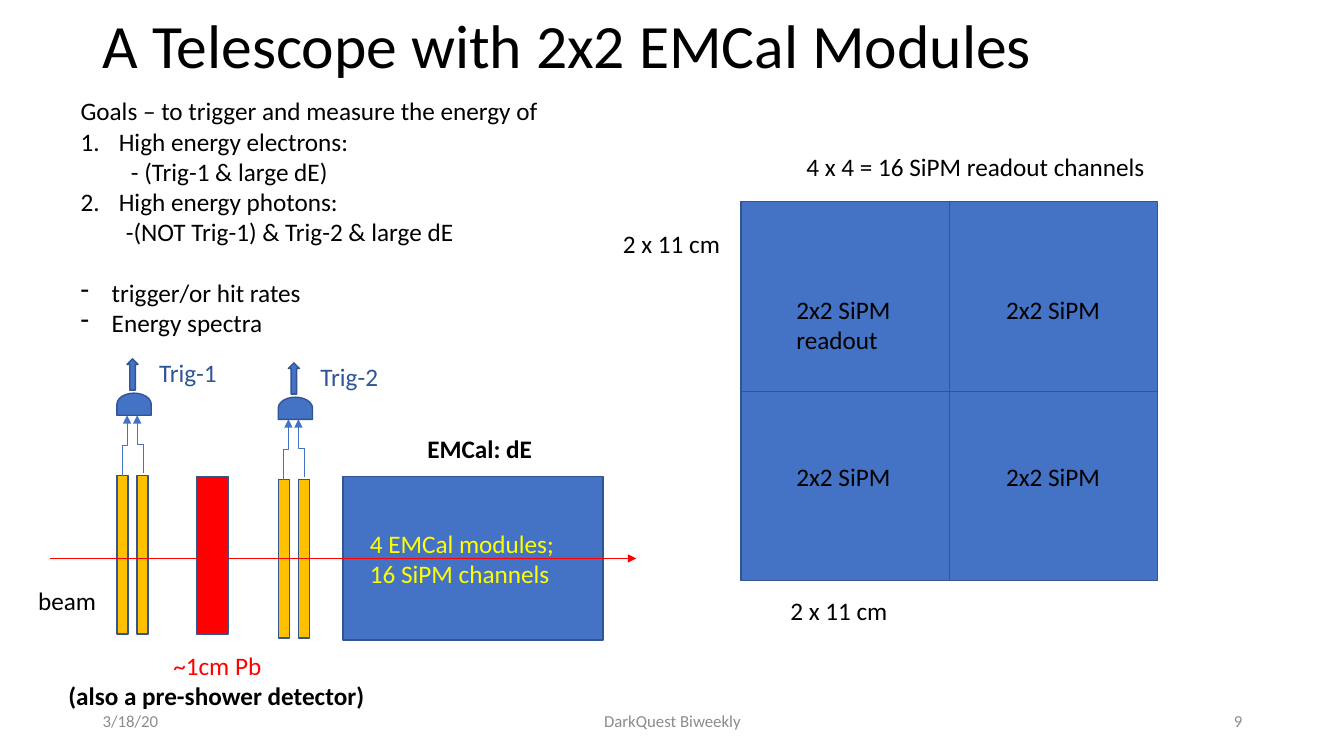
from pptx import Presentation
from pptx.util import Inches, Pt
from pptx.dml.color import RGBColor
from pptx.enum.shapes import MSO_SHAPE, MSO_CONNECTOR
from pptx.enum.text import PP_ALIGN, MSO_ANCHOR
from pptx.oxml.ns import qn
from lxml.etree import SubElement

THEME = {
    "font": "Calibri", "title": 44, "body": 18, "foot": 12, "thin": 0.5, "edge": 1,
    "black": "000000", "grey": "8C8C8C", "blue": "4472C4", "dark": "325491",
    "navy": "2F5597", "gold": "FFC000", "red": "FF0000", "yellow": "FFFF00",
}

TITLE = "A Telescope with 2x2 EMCal Modules"
FOOTER = [
    ("3/18/20", 0.92, 3, PP_ALIGN.LEFT),
    ("DarkQuest Biweekly", 4.42, 4.5, PP_ALIGN.CENTER),
    ("9", 9.42, 3, PP_ALIGN.RIGHT),
]
GOALS = [
    ("Goals – to trigger and measure the energy of", {}),
    ("High energy electrons:", {"left": 0.38, "hang": 0.38, "mark": "1"}),
    ("- (Trig-1 & large dE)", {"left": 0.5, "level": 1}),
    ("High energy photons:", {"left": 0.38, "hang": 0.38, "mark": "1"}),
    ("-(NOT Trig-1) & Trig-2 & large dE", {"left": 0.45, "level": 1}),
    ("trigger/or hit rates", {"left": 0.31, "hang": 0.31, "mark": "-", "gap": 21.6}),
    ("Energy spectra", {"left": 0.31, "hang": 0.31, "mark": "-"}),
]
LABELS = [
    (["2 x 11 cm"], 7.74, 5.86, 1.18, "black", False),
    (["2 x 11 cm"], 6.08, 2.22, 1.18, "black", False),
    (["4 x 4 = 16 SiPM readout channels"], 7.9, 1.45, 3.6, "black", False),
    (["beam"], 0.28, 5.76, 0.78, "black", False),
    (["~1cm Pb"], 1.62, 6.4, 1.09, "red", False),
    (["EMCal: dE"], 4.14, 4.25, 1.25, "black", True),
    (["(also a pre-shower detector)"], 0.58, 6.7, 3.16, "black", True),
]
FACE = (7.35, 2, 4.13, 3.76)
CELLS = [[["2x2 SiPM", "readout"], ["2x2 SiPM"]], [["2x2 SiPM"], ["2x2 SiPM"]]]
CALO = ["4 EMCal modules;", "16 SiPM channels"]
TRIGS = [("Trig-1", 1.16, 4.72), ("Trig-2", 2.76, 4.76)]

deck = Presentation()
deck.slide_width, deck.slide_height = Inches(13.33), Inches(7.5)
slide = deck.slides.add_slide(deck.slide_layouts[6])
shapes = slide.shapes


def tint(name):
    return RGBColor.from_string(THEME[name])


def style(para, text, color="black", size="body", bold=False):
    run = para.add_run()
    run.text = text
    font = run.font
    font.name, font.size, font.bold = THEME["font"], Pt(THEME[size]), bold
    font.color.rgb = tint(color)


def indent(para, left=0, hang=0, mark=None, level=0, gap=0):
    para.level = level
    para.space_before = Pt(gap)
    props = para._p.get_or_add_pPr()
    props.set("marL", str(Inches(left)))
    props.set("indent", str(-Inches(hang)))
    if mark == "1":
        SubElement(props, qn("a:buAutoNum"), type="arabicPeriod")
    elif mark:
        SubElement(props, qn("a:buChar"), char=mark)
    else:
        SubElement(props, qn("a:buNone"))


def write(frame, lines, color="black", size="body", bold=False):
    for i, (text, opts) in enumerate(lines):
        para = frame.paragraphs[0] if i == 0 else frame.add_paragraph()
        indent(para, **opts)
        style(para, text, color, size, bold)


def label(lines, x, y, w, h=0.4, wrap=False, **look):
    frame = shapes.add_textbox(*map(Inches, (x, y, w, h))).text_frame
    frame.word_wrap = wrap
    write(frame, lines, **look)
    return frame


def plain(lines):
    return [(text, {}) for text in lines]


def block(x, y, w, h, fill, kind=MSO_SHAPE.RECTANGLE, turn=0):
    shape = shapes.add_shape(kind, *map(Inches, (x, y, w, h)))
    shape.shadow.inherit = False
    shape.rotation = turn
    shape.fill.solid()
    shape.fill.fore_color.rgb = tint(fill)
    shape.line.color.rgb = tint("dark")
    shape.line.width = Pt(THEME["edge"])
    return shape


def wire(x1, y1, x2, y2, color, head=False, kind=MSO_CONNECTOR.STRAIGHT):
    line = shapes.add_connector(kind, *map(Inches, (x1, y1, x2, y2)))
    line.line.color.rgb = tint(color)
    line.line.width = Pt(THEME["thin"])
    if head:
        SubElement(line.line._get_or_add_ln(), qn("a:tailEnd"), type="triangle")
    SubElement(line._element.spPr, qn("a:effectLst"))
    return line


def riser(x1, y1, x2, y2):
    mx, my = (x1 + x2) / 2, (y1 + y2) / 2
    side = 1 if x1 > x2 else -1
    run, rise = side * (y1 - y2) / 2, abs(x1 - x2) / 2
    line = wire(mx - run, my + rise, mx + run, my - rise, "blue", True, MSO_CONNECTOR.ELBOW)
    line._element.spPr.find(qn("a:xfrm")).set("rot", str((180 + 90 * side) * 60000))


def trigger(name, x, y):
    for dx in (0, 0.2):
        block(x + dx, y, 0.11, 1.57, "gold")
    riser(x + 0.05, y, x + 0.1, y - 0.6)
    riser(x + 0.26, y - 0.03, x + 0.2, y - 0.6)
    block(x + 0.06, y - 0.88, 0.22, 0.34, "blue", MSO_SHAPE.FLOWCHART_DELAY, 270)
    block(x, y - 1.06, 0.31, 0.11, "blue", MSO_SHAPE.RIGHT_ARROW, 270)
    label(plain([name]), x + 0.32, y - 1.22, 0.78, color="navy")


head = label(plain([TITLE]), 0.92, 0, 11.5, 0.97, True, size="title")
head.vertical_anchor = MSO_ANCHOR.MIDDLE
head.paragraphs[0].line_spacing = 0.9
for text, x, w, align in FOOTER:
    foot = label(plain([text]), x, 6.95, w, wrap=True, color="grey", size="foot")
    foot.vertical_anchor = MSO_ANCHOR.MIDDLE
    foot.paragraphs[0].alignment = align
label(GOALS, 0.7, 0.9, 4.79, 2.52)

x, y, w, h = FACE
block(*FACE, "blue")
wire(x + w / 2, y, x + w / 2, y + h, "dark")
wire(x, y + h / 2, x + w, y + h / 2, "dark")
for r, row in enumerate(CELLS):
    for c, lines in enumerate(row):
        label(plain(lines), 7.8 + c * 2.08, 2.87 + r * 1.66, 1.14, 0.1 + 0.3 * len(lines))

calo = block(3.4, 4.73, 2.58, 1.62, "blue").text_frame
calo.vertical_anchor = MSO_ANCHOR.MIDDLE
write(calo, [(text, {"left": 0.17}) for text in CALO], "yellow")
for para in calo.paragraphs:
    para.alignment = PP_ALIGN.LEFT
for trig in TRIGS:
    trigger(*trig)
block(1.95, 4.73, 0.31, 1.56, "red")
wire(0.5, 5.54, 6.31, 5.54, "red", True)
for lines, x, y, w, color, bold in LABELS:
    label(plain(lines), x, y, w, color=color, bold=bold)

deck.save("out.pptx")
